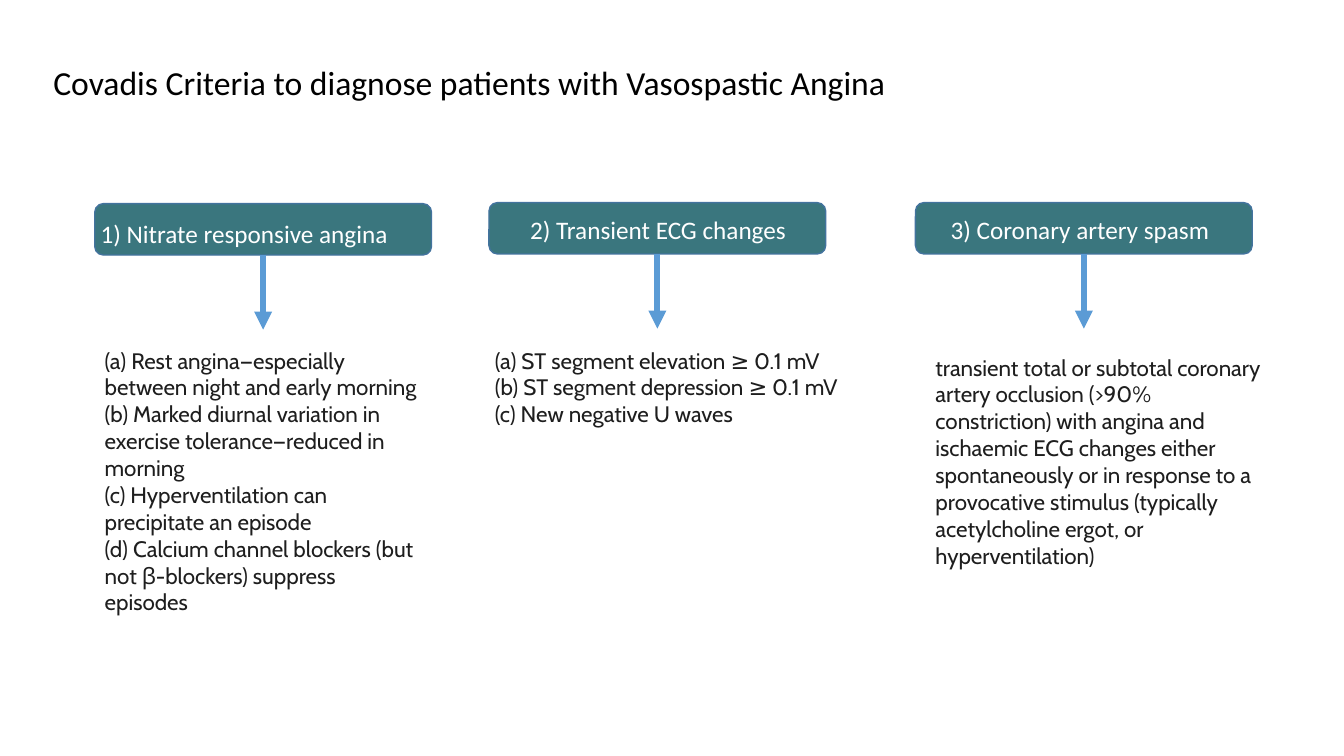
from dataclasses import dataclass

from lxml import etree
from pptx import Presentation
from pptx import util as u
from pptx.dml.color import RGBColor
from pptx.enum import shapes, text
from pptx.oxml import ns


@dataclass(frozen=True)
class Theme:
    """Colours, fonts and type sizes of the slide."""
    white: str = "FFFFFF"
    black: str = "000000"
    ink: str = "1E1E1E"
    teal: str = "3A767E"
    edge: str = "43739E"
    blue: str = "5B9BD5"
    sans: str = "Calibri"
    serif: str = "Cabin"
    title: int = 24
    head: int = 18
    body: int = 16


THEME = Theme()
BOX_W, BOX_H, DROP = 3.34, 0.51, 0.74

COLS = [
    {"box": (0.94, 2.02),
     "head": "1) Nitrate responsive angina", "label": (0.9, 2.12, 3.34, 0.4),
     "body": "(a) Rest angina—especially between night and early morning\n"
             "(b) Marked diurnal variation in exercise tolerance—reduced in morning\n"
             "(c) Hyperventilation can precipitate an episode\n"
             "(d) Calcium channel blockers (but not β-blockers) suppress episodes",
     "area": (0.94, 3.39, 3.34, 2.79)},
    {"box": (4.85, 2.01),
     "head": "2) Transient ECG changes", "label": (5.16, 2.08, 2.83, 0.4),
     "body": "(a) ST segment elevation ≥ 0.1 mV\n"
             "(b) ST segment depression ≥ 0.1 mV\n"
             "(c) New negative U waves",
     "area": (4.81, 3.39, 3.72, 0.91)},
    {"box": (9.08, 2.01),
     "head": "3) Coronary artery spasm", "label": (9.33, 2.08, 2.83, 0.4),
     "body": "transient total or subtotal coronary artery occlusion (>90% "
             "constriction) with angina and ischaemic ECG changes either "
             "spontaneously or in response to a provocative stimulus (typically "
             "acetylcholine ergot, or hyperventilation)",
     "area": (9.18, 3.46, 3.49, 2.26)},
]


def paint(fill, color):
    """Give a fill one solid colour."""
    fill.solid()
    fill.fore_color.rgb = RGBColor.from_string(color)


def write(slide, words, area, *, size, font, color, fill=None):
    """Add a wrapped text box in one format."""
    box = slide.shapes.add_textbox(*map(u.Inches, area))
    if fill:
        paint(box.fill, fill)
    frame = box.text_frame
    frame.word_wrap = True
    frame.auto_size = text.MSO_AUTO_SIZE.SHAPE_TO_FIT_TEXT
    para = frame.paragraphs[0]
    para.text = words.replace("\n", "\v")
    for run in para.runs:
        run.font.size = u.Pt(size)
        run.font.name = font
        run.font.color.rgb = RGBColor.from_string(color)


def panel(slide, left, top):
    """Add a rounded heading panel and return it."""
    area = map(u.Inches, (left, top, BOX_W, BOX_H))
    box = slide.shapes.add_shape(shapes.MSO_SHAPE.ROUNDED_RECTANGLE, *area)
    box.shadow.inherit = False
    paint(box.fill, THEME.teal)
    paint(box.line.fill, THEME.edge)
    box.line.width = u.Pt(1)
    return box


def arrow(slide, box):
    """Drop an arrow from the middle of a panel's lower side."""
    mid, base = box.left + box.width // 2, box.top + box.height
    line = slide.shapes.add_connector(
        shapes.MSO_CONNECTOR.STRAIGHT, mid, base, mid, base + u.Inches(DROP))
    line.begin_connect(box, 2)
    paint(line.line.fill, THEME.blue)
    line.line.width = u.Pt(4.25)
    etree.SubElement(line.line._get_or_add_ln(), ns.qn("a:tailEnd"), type="triangle")
    etree.SubElement(line._element.spPr, ns.qn("a:effectLst"))


def main():
    """Build and save the slide."""
    deck = Presentation()
    deck.slide_width, deck.slide_height = u.Inches(13.33), u.Inches(7.5)
    slide = deck.slides.add_slide(deck.slide_layouts[6])
    write(slide, "Covadis Criteria to diagnose patients with Vasospastic Angina",
          (0.43, 0.57, 11.99, 0.5), size=THEME.title, font=THEME.sans,
          color=THEME.black, fill=THEME.white)
    for col in COLS:
        box = panel(slide, *col["box"])
        write(slide, col["head"], col["label"], size=THEME.head,
              font=THEME.sans, color=THEME.white)
        write(slide, col["body"], col["area"], size=THEME.body,
              font=THEME.serif, color=THEME.ink)
        arrow(slide, box)
    deck.save("out.pptx")


if __name__ == "__main__":
    main()
